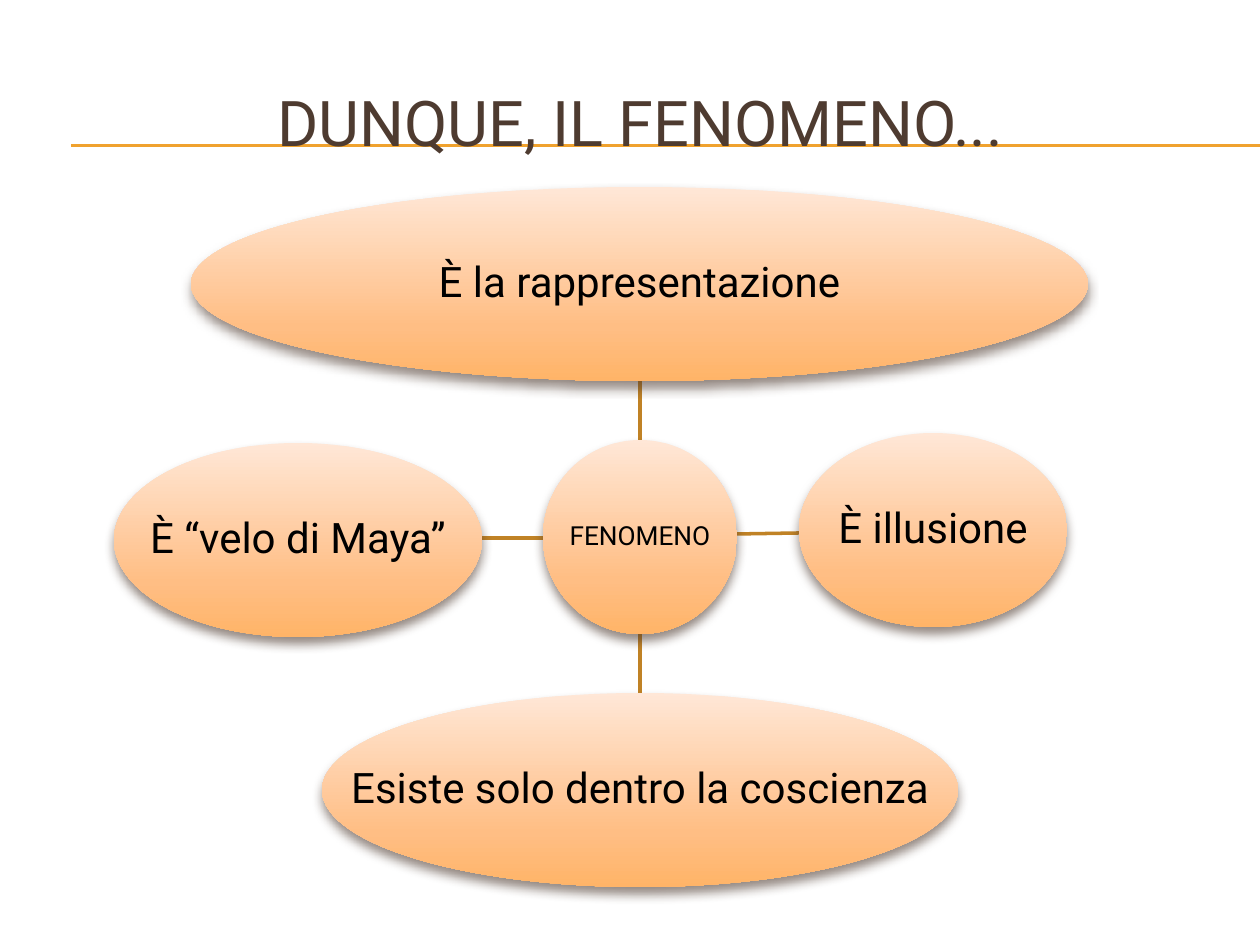
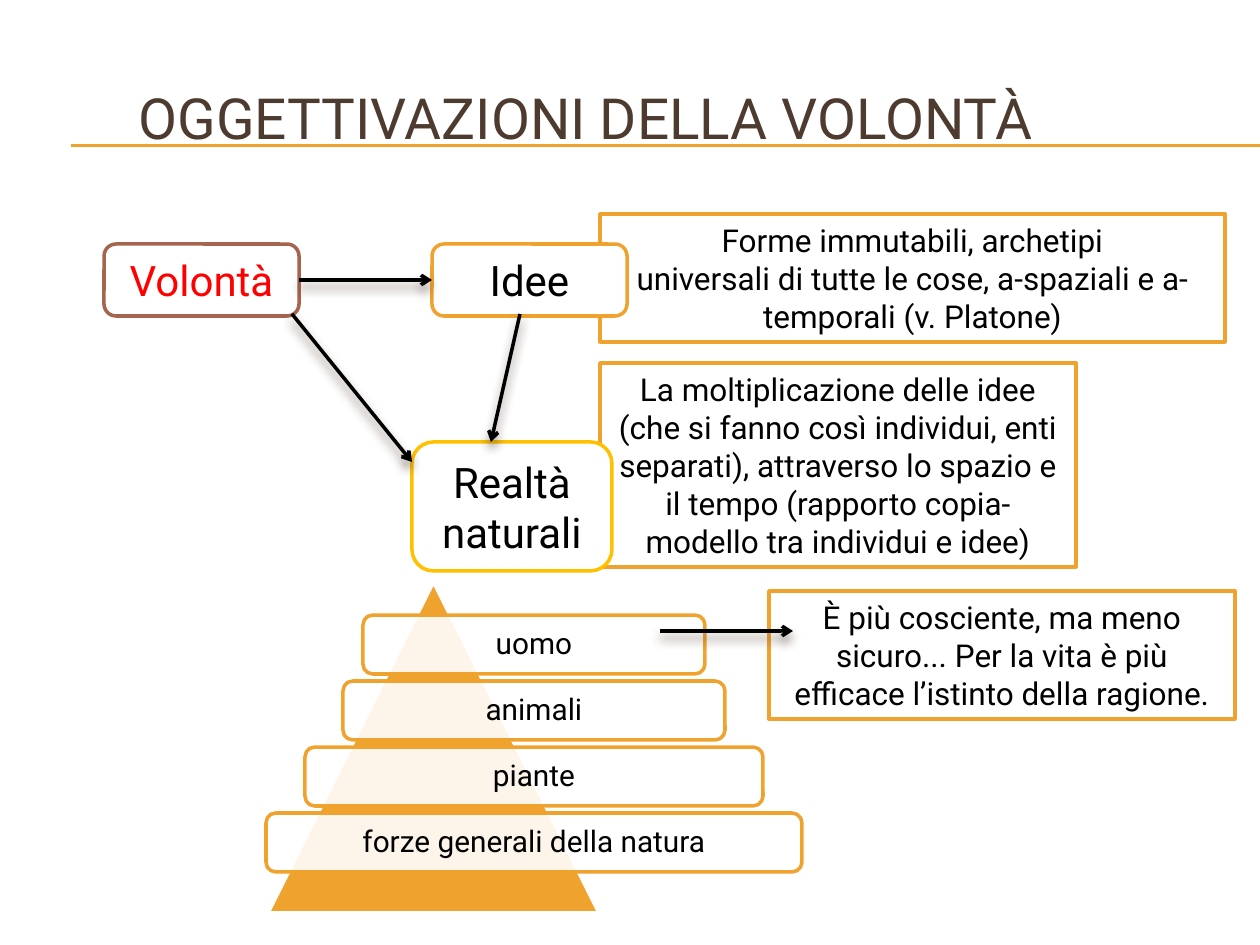
"""Build two slides on the phenomenon and on the objectifications of the will."""
import copy

import pptx
import pptx.dml.color
import pptx.enum.shapes
import pptx.enum.text
import pptx.oxml
import pptx.oxml.ns
import pptx.util

SCALE = 914400 / 126
KINDS = pptx.enum.shapes.MSO_SHAPE
ALIGN = pptx.enum.text.PP_ALIGN
MIDDLE = pptx.enum.text.MSO_ANCHOR.MIDDLE
NAMESPACE = pptx.oxml.ns.nsdecls("a")


class Theme:
    font = "Roboto"
    title = "4E3B30"
    black = "000000"
    white = "FFFFFF"
    red = "FF0000"
    orange = "F0A22E"
    brown = "A5644E"
    gold = "FFC000"
    spoke = "C08225"
    gradient = ((0, "FFE7D7"), (0.72, "FFBE84"), (1, "FFB468"))
    title_size = 36
    long_title_size = 32.4
    node_size = 24
    note_size = 18
    step_size = 17
    hub_size = 15
    line_width = 2
    rule_width = 0.75
    shadow = (
        f'<a:outerShdw {NAMESPACE} blurRad="76200" dist="50800" dir="5400000" rotWithShape="0">'
        f'<a:srgbClr val="{title}"><a:alpha val="60000"/></a:srgbClr></a:outerShdw>'
    )


def add_box(slide, kind, box, text, size, line=None, color=Theme.black, wrap=True):
    shape = slide.shapes.add_shape(kind, *[round(value * SCALE) for value in box])
    shape.shadow.inherit = False
    properties = shape._element.spPr
    if line:
        shape.fill.solid()
        shape.fill.fore_color.rgb = pptx.dml.color.RGBColor.from_string(Theme.white)
        shape.line.color.rgb = pptx.dml.color.RGBColor.from_string(line)
        shape.line.width = pptx.util.Pt(Theme.line_width)
    else:
        shape.line.fill.background()
        shape.fill.gradient()
        shape.fill.gradient_angle = 270
        stops = properties.find(pptx.oxml.ns.qn("a:gradFill")).gsLst
        stops.append(copy.deepcopy(stops[0]))
        for stop, (position, stop_color) in zip(shape.fill.gradient_stops, Theme.gradient):
            stop.position = position
            stop.color.rgb = pptx.dml.color.RGBColor.from_string(stop_color)
        effects = properties.find(pptx.oxml.ns.qn("a:effectLst"))
        effects.append(pptx.oxml.parse_xml(Theme.shadow))
    if text:
        frame = shape.text_frame
        frame.word_wrap = wrap
        frame.vertical_anchor = MIDDLE
        frame.text = text
        paragraph = frame.paragraphs[0]
        paragraph.alignment = ALIGN.CENTER
        for run in paragraph.runs:
            run.font.name = Theme.font
            run.font.size = pptx.util.Pt(size)
            run.font.color.rgb = pptx.dml.color.RGBColor.from_string(color)
    return shape


def add_line(slide, ends, color, width=Theme.line_width, arrow=False):
    connector = slide.shapes.add_connector(
        pptx.enum.shapes.MSO_CONNECTOR.STRAIGHT, *[round(value * SCALE) for value in ends]
    )
    connector.line.color.rgb = pptx.dml.color.RGBColor.from_string(color)
    connector.line.width = pptx.util.Pt(width)
    effects = pptx.oxml.parse_xml(f"<a:effectLst {NAMESPACE}/>")
    connector._element.spPr.append(effects)
    if arrow:
        effects.append(pptx.oxml.parse_xml(Theme.shadow))
        outline = connector._element.spPr.find(pptx.oxml.ns.qn("a:ln"))
        outline.append(pptx.oxml.parse_xml(f'<a:tailEnd {NAMESPACE} type="arrow"/>'))
    return connector


presentation = pptx.Presentation()
presentation.slide_width = round(1260 * SCALE)
presentation.slide_height = round(945 * SCALE)
layout = presentation.slide_layouts.get_by_name("Title Only")

titles = [
    ("DUNQUE, IL FENOMENO...", (42, 63, 1197, 116), Theme.title_size, ALIGN.CENTER),
    ("OGGETTIVAZIONI DELLA VOLONTÀ", (126, 38, 921, 157), Theme.long_title_size, ALIGN.LEFT),
]
for text, box, size, alignment in titles:
    slide = presentation.slides.add_slide(layout)
    title = slide.shapes.title
    title.left, title.top, title.width, title.height = [round(value * SCALE) for value in box]
    title.text_frame.text = text
    title.text_frame.vertical_anchor = MIDDLE
    title.text_frame.auto_size = pptx.enum.text.MSO_AUTO_SIZE.NONE
    paragraph = title.text_frame.paragraphs[0]
    paragraph.alignment = alignment
    font = paragraph.runs[0].font
    font.name = Theme.font
    font.size = pptx.util.Pt(size)
    font.color.rgb = pptx.dml.color.RGBColor.from_string(Theme.title)

phenomenon, will = presentation.slides
for rule_top in (145, 146):
    rule = add_line(phenomenon, (71, rule_top, 1260, rule_top), Theme.orange, Theme.rule_width)
    rule._element.nvCxnSpPr.cNvPr.id = rule_top
    layout.shapes._spTree.append(rule._element)

spokes = [(640, 440, 640, 381), (737, 534, 799, 533), (640, 634, 640, 693), (543, 538, 482, 538)]
for ends in spokes:
    add_line(phenomenon, ends, Theme.spoke)

diameter = 194
ellipses = [
    ("FENOMENO", 543, 440, diameter, Theme.hub_size),
    ("È la rappresentazione", 191, 187, 897, Theme.node_size),
    ("È illusione", 799, 433, 268, Theme.node_size),
    ("Esiste solo dentro la coscienza", 322, 693, 636, Theme.node_size),
    ("È “velo di Maya”", 114, 443, 368, Theme.node_size),
]
for text, left, top, width, size in ellipses:
    ellipse = add_box(phenomenon, KINDS.OVAL, (left, top, width, diameter), text, size, wrap=False)
    ellipse.text_frame.paragraphs[0].line_spacing = 0.9

notes = [
    (
        "La moltiplicazione delle idee (che si fanno così individui, enti separati), "
        "attraverso lo spazio e il tempo (rapporto copia-modello tra individui e idee)",
        (600, 363, 476, 204),
    ),
    (
        "Forme immutabili, archetipi\vuniversali di tutte le cose, a-spaziali e a-temporali (v. Platone)",
        (600, 214, 625, 128),
    ),
    (
        "È più cosciente, ma meno sicuro... Per la vita è più efficace l’istinto della ragione.",
        (769, 591, 466, 128),
    ),
]
for text, box in notes:
    add_box(will, KINDS.RECTANGLE, box, text, Theme.note_size, Theme.orange)

nodes = [
    ("Volontà", (104, 244, 195, 72), Theme.brown, Theme.red),
    ("Idee", (432, 244, 195, 72), Theme.orange, Theme.black),
    ("Realtà naturali", (412, 442, 200, 129), Theme.gold, Theme.black),
]
volonta, idee, realta = [
    add_box(will, KINDS.ROUNDED_RECTANGLE, box, text, Theme.node_size, line, color)
    for text, box, line, color in nodes
]

pyramid = add_box(will, KINDS.ISOSCELES_TRIANGLE, (268, 582, 331, 331), "", 0, Theme.white)
pyramid.fill.fore_color.rgb = pptx.dml.color.RGBColor.from_string(Theme.orange)
steps = [("uomo", 342), ("animali", 382), ("piante", 458), ("forze generali della natura", 536)]
for index, (text, width) in enumerate(steps):
    box = (534 - width / 2, 615 + 66 * index, width, 59)
    step = add_box(will, KINDS.ROUNDED_RECTANGLE, box, text, Theme.step_size, Theme.orange)
    step.text_frame.paragraphs[0].line_spacing = 0.9
    fill_color = step._element.spPr.find(pptx.oxml.ns.qn("a:solidFill"))[0]
    fill_color.append(pptx.oxml.parse_xml(f'<a:alpha {NAMESPACE} val="90000"/>'))

arrows = [(299, 280, 432, 280), (292, 314, 412, 462), (520, 314, 491, 442), (660, 631, 793, 631)]
to_ideas, *_ = [add_line(will, ends, Theme.black, arrow=True) for ends in arrows]
to_ideas.begin_connect(volonta, 3)
to_ideas.end_connect(idee, 1)

presentation.save("out.pptx")
